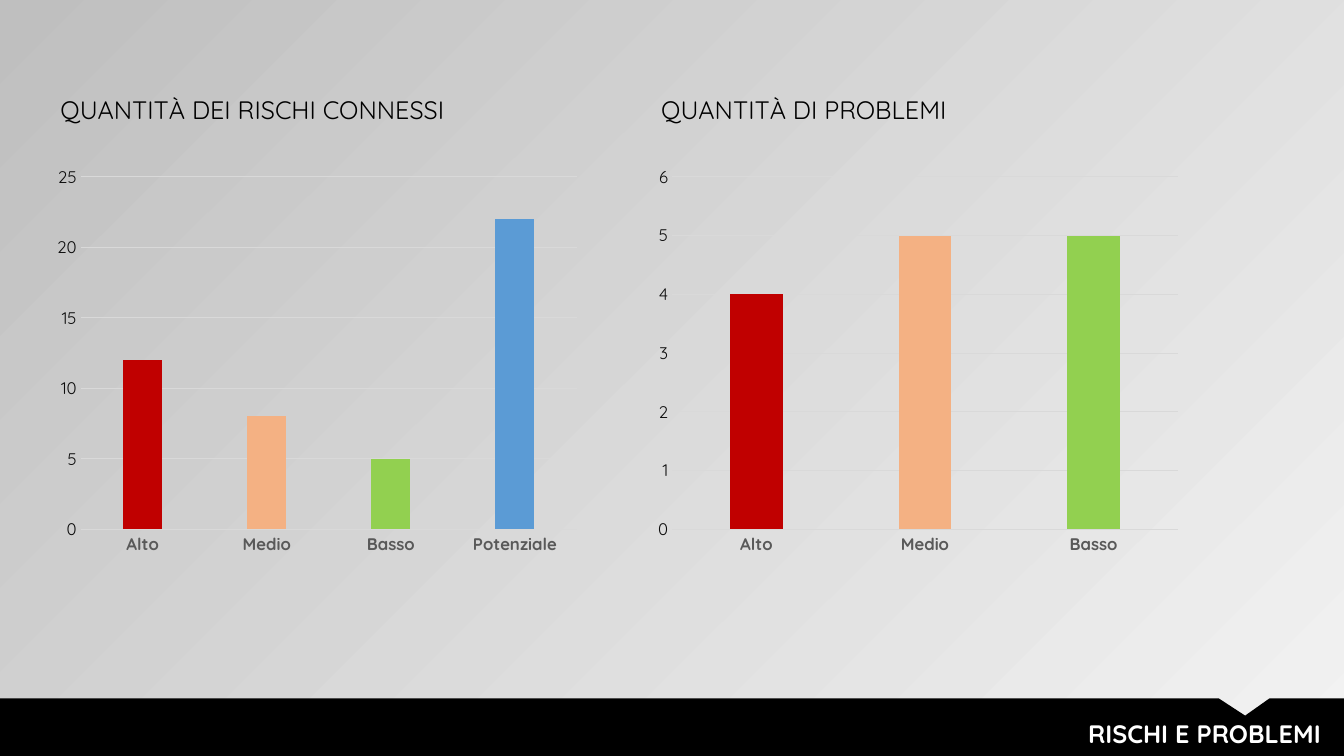
from pptx import Presentation
from pptx.chart.data import CategoryChartData
from pptx.dml.color import RGBColor
from pptx.enum.chart import XL_CHART_TYPE, XL_TICK_MARK
from pptx.enum.text import MSO_ANCHOR, MSO_AUTO_SIZE, PP_ALIGN
from pptx.util import Inches, Pt

COLUMN = XL_CHART_TYPE.COLUMN_CLUSTERED
NO_TICK = XL_TICK_MARK.NONE
TOP = MSO_ANCHOR.TOP
NO_FIT = MSO_AUTO_SIZE.NONE
LEFT, RIGHT = PP_ALIGN.LEFT, PP_ALIGN.RIGHT

FONT = "Quicksand"
BLACK, WHITE, GRID = "000000", "FFFFFF", "D9D9D9"
BARS = ["C00000", "F4B183", "92D050", "5B9BD5"]
WIDE, HIGH = 13.33, 7.5


def color(code):
    return RGBColor.from_string(code)


def style(font, size, code, bold=False):
    font.name = FONT
    font.size = Pt(size)
    font.bold = bold
    font.color.rgb = color(code)


def write(shape, text, code, bold=False, align=LEFT):
    frame = shape.text_frame
    frame.word_wrap = True
    frame.auto_size = NO_FIT
    frame.vertical_anchor = TOP
    para = frame.paragraphs[0]
    para.alignment = align
    run = para.add_run()
    run.text = text
    style(run.font, 18, code, bold)


def rule(line):
    line.color.rgb = color(GRID)
    line.width = Pt(0.75)


def backdrop(slide):
    fill = slide.background.fill
    fill.gradient()
    fill.gradient_angle = 135
    for stop, code in zip(fill.gradient_stops, ["F2F2F2", "BFBFBF"]):
        stop.color.rgb = color(code)


def panel(slide, left, top, head, cats, vals):
    # Heading
    box = slide.shapes.add_textbox(
        Inches(left + 0.04), Inches(top), Inches(4.44), Inches(0.4))
    write(box, head, BLACK)

    # Column chart
    data = CategoryChartData()
    data.categories = cats
    data.add_series("Series 1", vals)
    chart = slide.shapes.add_chart(
        COLUMN, Inches(left), Inches(top + 0.68),
        Inches(5.37), Inches(4.01), data).chart
    chart.has_legend = False
    chart.has_title = False
    style(chart.font, 10, BLACK)

    # Axes
    base, scale = chart.category_axis, chart.value_axis
    for axis in (base, scale):
        axis.major_tick_mark = NO_TICK
        axis.minor_tick_mark = NO_TICK
    style(base.tick_labels.font, 12, "595959", True)
    style(scale.tick_labels.font, 12, "0D0D0D")
    rule(base.format.line)
    scale.format.line.fill.background()
    rule(scale.major_gridlines.format.line)

    # Bars
    plot = chart.plots[0]
    plot.vary_by_categories = False
    plot.gap_width = 219
    plot.overlap = -5
    series = plot.series[0]
    for i in range(len(vals)):
        fill = series.points[i].format.fill
        fill.solid()
        fill.fore_color.rgb = color(BARS[i])


def footer(slide, top, text):
    # Black band with a notch
    edge = [(12.09, top), (12.35, top + 0.17), (12.59, top),
            (WIDE, top), (WIDE, HIGH), (0, HIGH)]
    path = slide.shapes.build_freeform(0, Inches(top))
    path.add_line_segments([(Inches(x), Inches(y)) for x, y in edge])
    band = path.convert_to_shape()
    band.shadow.inherit = False
    band.fill.solid()
    band.fill.fore_color.rgb = color(BLACK)
    band.line.fill.background()

    # Title in front of the band
    title = slide.shapes.title
    title.left, title.top = Inches(4.14), Inches(top + 0.15)
    title.width, title.height = Inches(9.06), Inches(0.4)
    write(title, text, WHITE, True, RIGHT)
    band.element.addnext(title.element)


def main():
    deck = Presentation()
    deck.slide_width, deck.slide_height = Inches(WIDE), Inches(HIGH)
    slide = deck.slides.add_slide(deck.slide_layouts[5])
    backdrop(slide)
    levels = ["Alto", "Medio", "Basso"]
    panel(slide, 0.46, 0.89, "QUANTITÀ DEI RISCHI CONNESSI",
          levels + ["Potenziale"], [12, 8, 5, 22])
    panel(slide, 6.42, 0.89, "QUANTITÀ DI PROBLEMI", levels, [4, 5, 5])
    footer(slide, 6.93, "RISCHI E PROBLEMI")
    deck.save("out.pptx")


if __name__ == "__main__":
    main()
